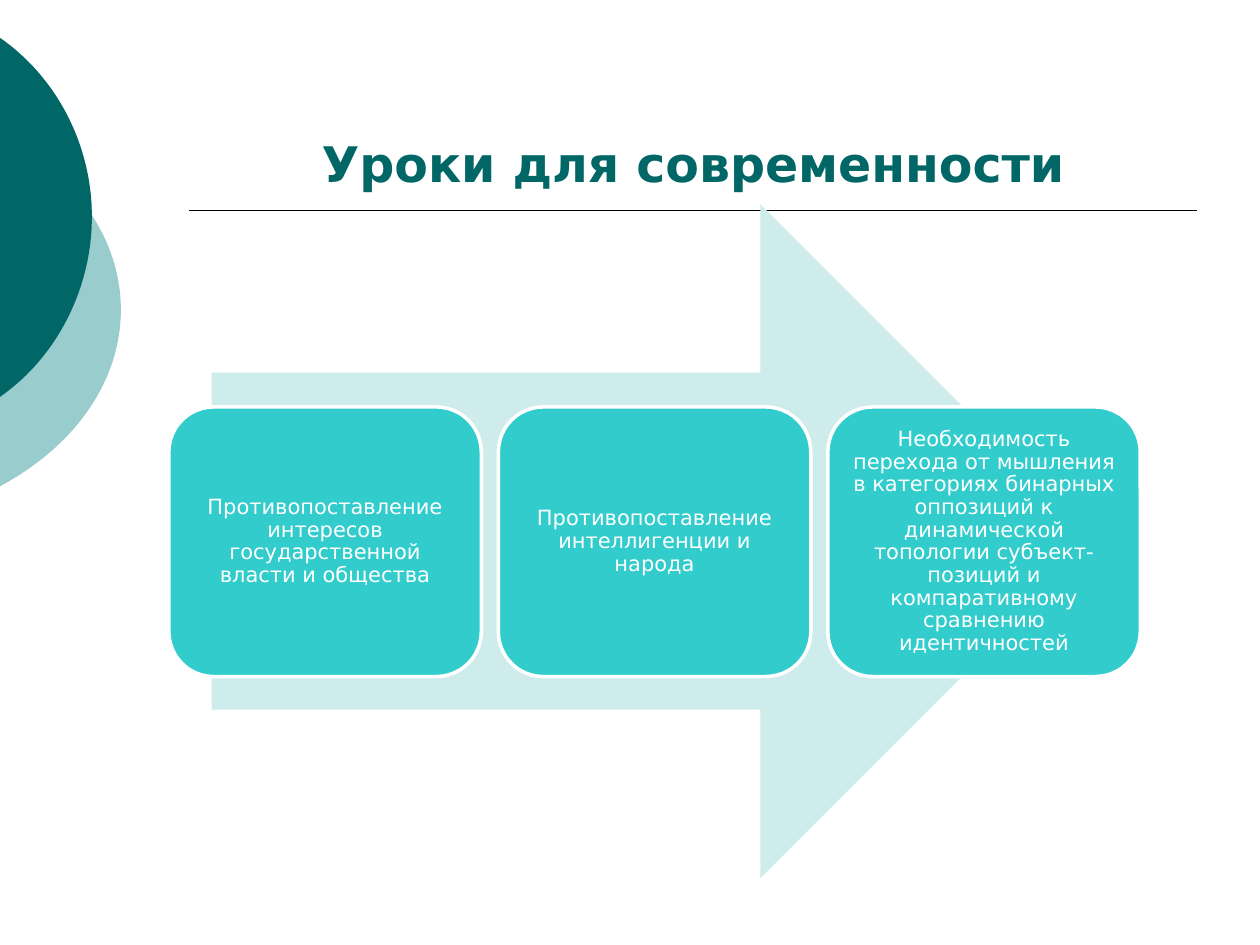
from dataclasses import dataclass

from lxml import etree
from pptx import Presentation
from pptx.dml.color import RGBColor
from pptx.enum import shapes, text
from pptx.oxml.ns import qn
from pptx.util import Inches, Pt

FONT = "DejaVu Sans"
DARK, PALE, TEAL, MIST = "006666", "99CCCC", "33CCCC", "CEECEC"
WHITE, BLACK = "FFFFFF", "000000"


@dataclass
class Disc:
    """Visible part of a disc cut by the left edge, as two cubic curves."""
    color: str
    top: float
    right: float
    middle: float
    bottom: float
    bend_x: float
    bend_top: float
    bend_right: float


DISCS = [
    Disc(PALE, 1.06, 0.96, 2.46, 3.86, 0.6, 0.32, 0.56),
    Disc(DARK, 0.3, 0.73, 1.72, 3.15, 0.46, 0.32, 0.56),
]
LESSONS = [
    "Противопоставление интересов государственной власти и общества",
    "Противопоставление интеллигенции и народа",
    "Необходимость перехода от мышления в категориях бинарных оппозиций "
    "к динамической топологии субъект-позиций и компаративному сравнению "
    "идентичностей",
]
CARD_LEFT, CARD_TOP, CARD_W, CARD_H, CARD_STEP = 1.34, 3.23, 2.48, 2.14, 2.615


def rgb(color: str) -> RGBColor:
    return RGBColor.from_string(color)


def paint(sp, fill: str, line: str | None = None, width: float = 1) -> None:
    sp.shadow.inherit = False
    sp.fill.solid()
    sp.fill.fore_color.rgb = rgb(fill)
    if line:
        sp.line.color.rgb = rgb(line)
        sp.line.width = Pt(width)
    else:
        sp.line.fill.background()


def write(sp, words: str, size: float, color: str, bold: bool = False):
    tf = sp.text_frame
    tf.text = words
    tf.word_wrap = True
    p = tf.paragraphs[0]
    p.alignment = text.PP_ALIGN.CENTER
    font = p.runs[0].font
    font.name, font.size, font.bold = FONT, Pt(size), bold
    font.color.rgb = rgb(color)
    return tf


def cubic(points: list[tuple[float, float]], steps: int = 32) -> list[tuple[int, int]]:
    curve = []
    for i in range(steps + 1):
        t = i / steps
        weights = ((1 - t) ** 3, 3 * t * (1 - t) ** 2, 3 * t * t * (1 - t), t ** 3)
        x, y = (sum(w * pt[axis] for w, pt in zip(weights, points)) for axis in (0, 1))
        curve.append((Inches(x), Inches(y)))
    return curve


def draw_disc(slide, d: Disc) -> None:
    upper = [(0, d.top), (d.bend_x, d.top + d.bend_top),
             (d.right, d.middle - d.bend_right), (d.right, d.middle)]
    lower = [(d.right, d.middle), (d.right, d.middle + d.bend_right),
             (d.bend_x, d.bottom - d.bend_top), (0, d.bottom)]
    outline = cubic(upper) + cubic(lower)[1:]
    builder = slide.shapes.build_freeform(*outline[0])
    builder.add_line_segments(outline[1:], close=True)
    paint(builder.convert_to_shape(), d.color)


def draw_card(slide, index: int, words: str) -> None:
    sp = slide.shapes.add_shape(
        shapes.MSO_SHAPE.ROUNDED_RECTANGLE, Inches(CARD_LEFT + index * CARD_STEP),
        Inches(CARD_TOP), Inches(CARD_W), Inches(CARD_H))
    paint(sp, TEAL, WHITE, 2)
    tf = write(sp, words, 12, WHITE)
    tf.vertical_anchor = text.MSO_ANCHOR.MIDDLE
    tf.margin_left = tf.margin_right = tf.margin_top = tf.margin_bottom = Inches(0.05)
    tf.paragraphs[0].line_spacing = 0.9


def main() -> None:
    prs = Presentation()
    prs.slide_width, prs.slide_height = Inches(10), Inches(7.5)
    slide = prs.slides.add_slide(prs.slide_layouts[5])

    # Discs at the left edge
    for disc in DISCS:
        draw_disc(slide, disc)

    # Title and the rule below it
    rule = slide.shapes.add_connector(
        shapes.MSO_CONNECTOR.STRAIGHT, Inches(1.5), Inches(1.67), Inches(9.5), Inches(1.67))
    rule.line.color.rgb = rgb(BLACK)
    rule.line.width = Pt(1)
    etree.SubElement(rule._element.spPr, qn("a:effectLst"))

    title = slide.shapes.title
    title.left, title.top = Inches(1.5), Inches(0.33)
    title.width, title.height = Inches(8), Inches(1.25)
    tf = write(title, "Уроки для современности", 28, DARK, bold=True)
    tf.vertical_anchor = text.MSO_ANCHOR.BOTTOM

    # Arrow behind the three lessons
    arrow = slide.shapes.add_shape(
        shapes.MSO_SHAPE.RIGHT_ARROW, Inches(1.68), Inches(1.62), Inches(7.03), Inches(5.35))
    paint(arrow, MIST)
    for i, lesson in enumerate(LESSONS):
        draw_card(slide, i, lesson)

    prs.save("out.pptx")


if __name__ == "__main__":
    main()
